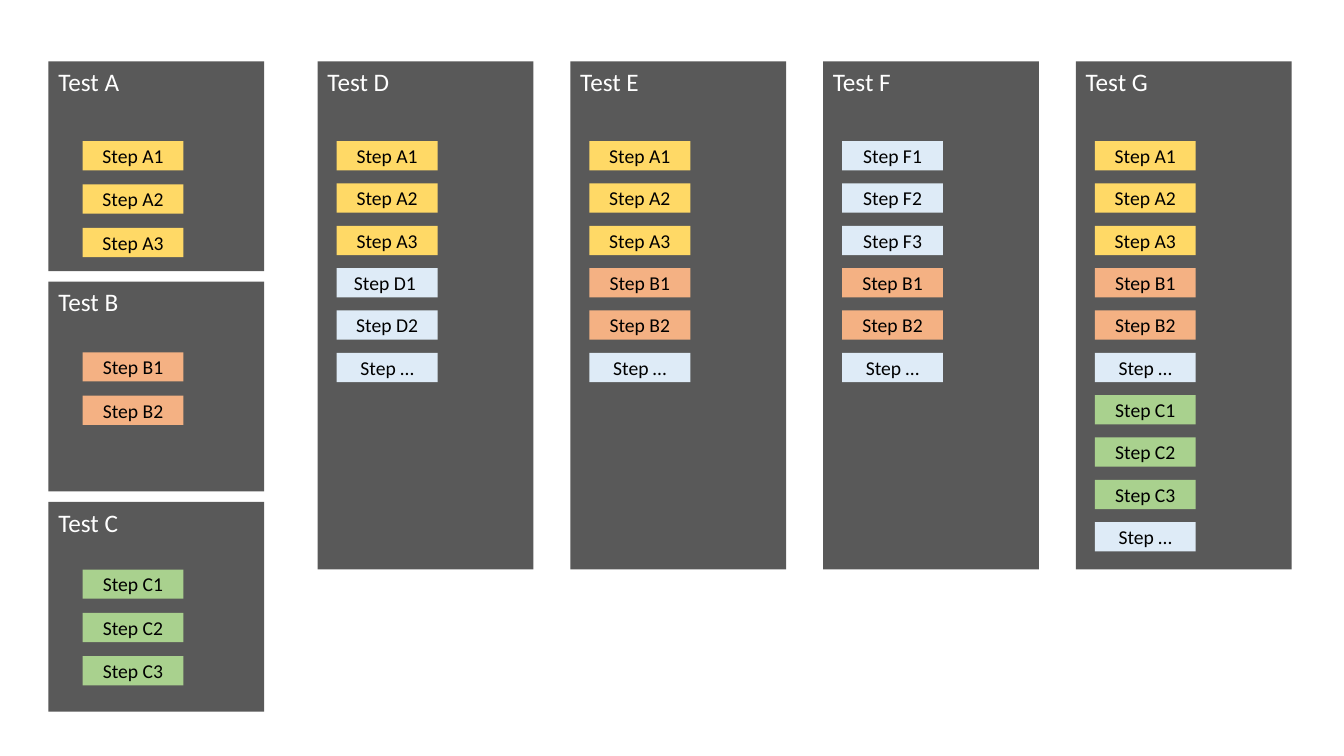
import pptx
import pptx.dml.color
import pptx.enum.shapes
import pptx.enum.text
import pptx.util

Inches = pptx.util.Inches
ALIGN = pptx.enum.text.PP_ALIGN
ANCHOR = pptx.enum.text.MSO_ANCHOR

PANEL_FILL = "595959"
STEP_FILLS = {"A": "FFD966", "B": "F4B183", "C": "A9D18E"}
OTHER_STEP_FILL = "DEEBF7"

LEFT, TOP = 0.48, 0.61
PANEL_WIDTH = 2.14
BASE_HEIGHT, COMBINED_HEIGHT = 2.08, 5.04
BASE_PITCH = (4.98 - TOP) / 2
COMBINED_LEFT = 3.15
COMBINED_PITCH = (10.67 - COMBINED_LEFT) / 3
STEP_WIDTH, STEP_HEIGHT = 1, 0.29

BASE_TESTS = [
    ("Test A", ["A1", "A2", "A3"], 0.79),
    ("Test B", ["B1", "B2"], 0.70),
    ("Test C", ["C1", "C2", "C3"], 0.67),
]
COMBINED_TESTS = [
    ("Test D", ["A1", "A2", "A3", "D1 ", "D2", "…"]),
    ("Test E", ["A1", "A2", "A3", "B1", "B2", "…"]),
    ("Test F", ["F1", "F2", "F3", "B1", "B2", "…"]),
    ("Test G", ["A1", "A2", "A3", "B1", "B2", "…", "C1", "C2", "C3", "…"]),
]


def color(value):
    """Turn a hex string into a colour."""
    return pptx.dml.color.RGBColor.from_string(value)


def write_text(frame, text, size, font_color, align, anchor):
    """Write one formatted paragraph into a text frame."""
    frame.word_wrap = True
    frame.vertical_anchor = anchor
    paragraph = frame.paragraphs[0]
    paragraph.alignment = align
    run = paragraph.add_run()
    run.text = text
    run.font.name = "Calibri"
    run.font.size = pptx.util.Pt(size)
    run.font.color.rgb = color(font_color)


def add_block(slide, box, fill, text, **text_format):
    """Draw a flat labelled rectangle in a box given in inches."""
    block = slide.shapes.add_shape(
        pptx.enum.shapes.MSO_SHAPE.RECTANGLE, *map(Inches, box))
    block.shadow.inherit = False
    block.fill.solid()
    block.fill.fore_color.rgb = color(fill)
    block.line.fill.background()
    write_text(block.text_frame, text, **text_format)


def add_test(slide, box, title, steps, indent, first_step, step_pitch):
    """Draw a test panel with its column of steps."""
    left, top = box[:2]
    add_block(slide, box, PANEL_FILL, title, size=18, font_color="FFFFFF",
              align=ALIGN.LEFT, anchor=ANCHOR.TOP)
    for row, step in enumerate(steps):
        step_box = (left + indent, top + first_step + row * step_pitch,
                    STEP_WIDTH, STEP_HEIGHT)
        add_block(slide, step_box, STEP_FILLS.get(step[0], OTHER_STEP_FILL),
                  f"Step {step}", size=14, font_color="000000",
                  align=ALIGN.CENTER, anchor=ANCHOR.MIDDLE)


def add_base_tests(slide, left, top):
    """Stack the tests that define the shared steps."""
    for row, (title, steps, first_step) in enumerate(BASE_TESTS):
        box = (left, top + row * BASE_PITCH, PANEL_WIDTH, BASE_HEIGHT)
        add_test(slide, box, title, steps, 0.34, first_step, 0.43)


def add_combined_tests(slide, left, top):
    """Line up the tests that reuse the shared steps."""
    for column, (title, steps) in enumerate(COMBINED_TESTS):
        box = (left + column * COMBINED_PITCH, top, PANEL_WIDTH, COMBINED_HEIGHT)
        add_test(slide, box, title, steps, 0.19, 0.79, 0.42)


def main():
    """Build and save the slide."""
    deck = pptx.Presentation()
    deck.slide_width, deck.slide_height = Inches(13.33), Inches(7.5)
    slide = deck.slides.add_slide(deck.slide_layouts[6])
    add_base_tests(slide, LEFT, TOP)
    add_combined_tests(slide, COMBINED_LEFT, TOP)
    deck.save("out.pptx")


if __name__ == "__main__":
    main()
